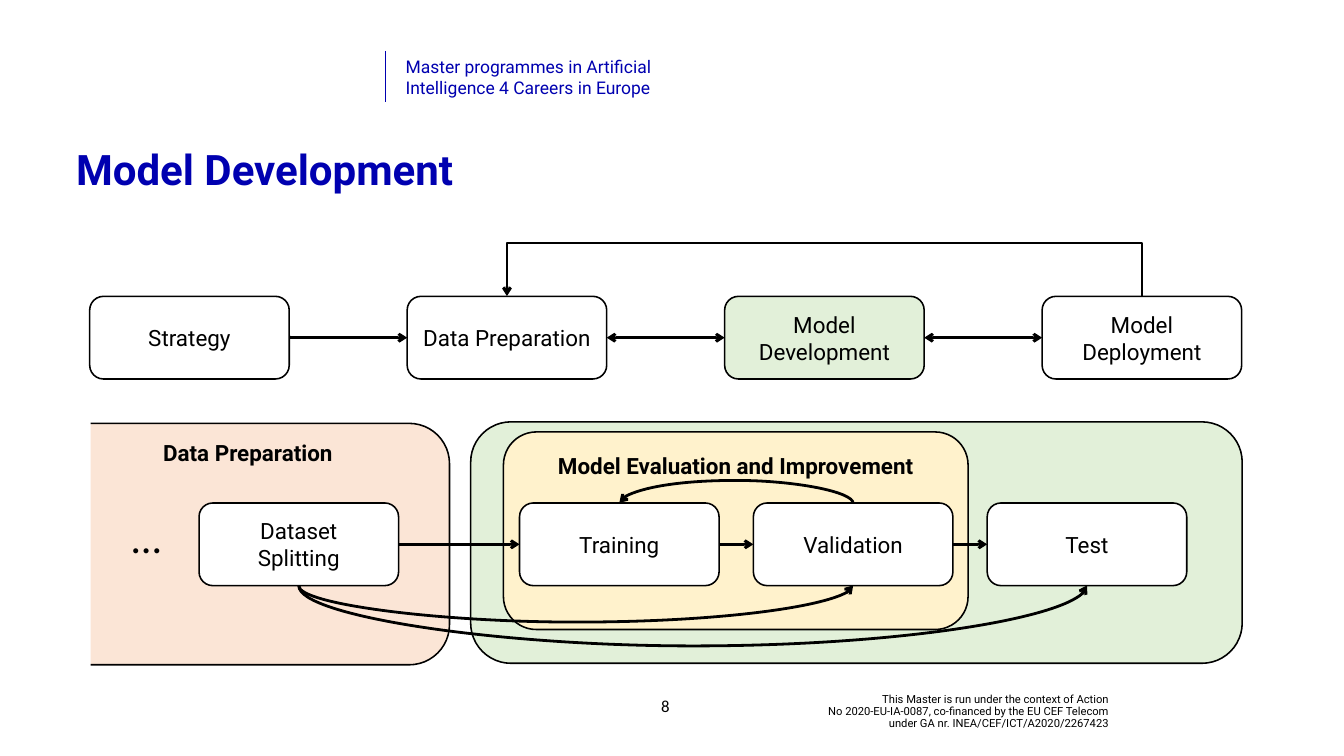
from lxml import etree
from pptx import Presentation
from pptx.dml.color import RGBColor
from pptx.enum.shapes import MSO_CONNECTOR, MSO_SHAPE
from pptx.enum.text import MSO_ANCHOR, MSO_AUTO_SIZE, PP_ALIGN
from pptx.oxml.ns import qn
from pptx.util import Inches, Pt

ROUND, RECT = MSO_SHAPE.ROUNDED_RECTANGLE, MSO_SHAPE.RECTANGLE
LINE, ELBOW, CURVE = MSO_CONNECTOR.STRAIGHT, MSO_CONNECTOR.ELBOW, MSO_CONNECTOR.CURVE
LEFT, MID, RIGHT = PP_ALIGN.LEFT, PP_ALIGN.CENTER, PP_ALIGN.RIGHT
TOP, CENTER = MSO_ANCHOR.TOP, MSO_ANCHOR.MIDDLE
HEX = {"blue": "0000B0", "black": "000000", "white": "FFFFFF",
       "green": "E2F0D9", "yellow": "FFF2CC", "peach": "FBE5D6"}
BOX_W, BOX_H = 3.96, 1.64
TOP_Y, LOW_Y = 5.88, 9.98
THIN = 0.01


def color(name):
    return RGBColor.from_string(HEX[name])


def write(frame, text, size, tone="black", bold=False, align=LEFT, anchor=TOP, font="Roboto"):
    frame.word_wrap = True
    frame.auto_size = MSO_AUTO_SIZE.NONE
    frame.vertical_anchor = anchor
    frame.text = text
    for para in frame.paragraphs:
        para.alignment = align
        for run in para.runs:
            run.font.name = font
            run.font.size = Pt(size)
            run.font.bold = bold
            run.font.color.rgb = color(tone)


def label(slide, area, text, size, **style):
    box = slide.shapes.add_textbox(*map(Inches, area))
    write(box.text_frame, text, size, **style)
    return box


def block(slide, kind, area, fill, edge=True):
    shape = slide.shapes.add_shape(kind, *map(Inches, area))
    shape.shadow.inherit = False
    shape.fill.solid()
    shape.fill.fore_color.rgb = color(fill)
    if edge:
        shape.line.color.rgb = color("black")
        shape.line.width = Pt(2.25)
    else:
        shape.line.fill.background()
    return shape


def fit(shape, text, pad=0.06, **style):
    frame = shape.text_frame
    frame.margin_left = frame.margin_right = frame.margin_bottom = Inches(0.06)
    frame.margin_top = Inches(pad)
    write(frame, text, 32, align=MID, **style)


def panel(slide, area, fill, text, pad):
    fit(block(slide, ROUND, area, fill), text, pad, bold=True)


def node(slide, left, top, text, fill="white"):
    shape = block(slide, ROUND, (left, top, BOX_W, BOX_H), fill)
    fit(shape, text, anchor=CENTER)
    return shape


def stroke(wire, width=4, tone="black", head=False, tail=False):
    wire.line.color.rgb = color(tone)
    wire.line.width = Pt(width)
    line = wire.line._ln
    for tag, shown in (("a:headEnd", head), ("a:tailEnd", tail)):
        if shown:
            etree.SubElement(line, qn(tag)).set("type", "arrow")
    etree.SubElement(wire._element.spPr, qn("a:effectLst"))


def link(slide, start, end, both=False):
    wire = slide.shapes.add_connector(LINE, 0, 0, 0, 0)
    wire.begin_connect(start, 3)
    wire.end_connect(end, 1)
    stroke(wire, head=both, tail=True)


def loop(slide, kind, right, left, depth, up):
    far, near = (s.left + s.width // 2 for s in (right, left))
    edge = right.top if up else right.top + right.height
    mid, half, thin = (far + near) // 2, (far - near) // 2, Inches(THIN) // 2
    wire = slide.shapes.add_connector(kind, mid - thin, edge - half, mid + thin, edge + half)
    form = wire._element.spPr.find(qn("a:xfrm"))
    form.set("rot", str((270 if up else 90) * 60000))
    if up:
        form.set("flipV", "1")
    geom = wire._element.spPr.find(qn("a:prstGeom"))
    guide = etree.SubElement(geom.find(qn("a:avLst")), qn("a:gd"))
    guide.set("name", "adj1")
    guide.set("fmla", f"val {round(depth / THIN * 100000)}")
    stroke(wire, head=not up, tail=up)


def frame_page(slide):
    foot = label(slide, (15.02, 13.74, 7.08, 0.76),
                 "This Master is run under the context of Action\v"
                 "No 2020-EU-IA-0087, co-financed by the EU CEF Telecom\v"
                 "under GA nr. INEA/CEF/ICT/A2020/2267423",
                 16, align=RIGHT, anchor=CENTER)
    foot.text_frame.paragraphs[0].line_spacing = 0.9
    rule = slide.shapes.add_connector(LINE, *map(Inches, (7.65, 1.01, 7.65, 2.03)))
    stroke(rule, 0.5, "blue")
    label(slide, (7.95, 1.06, 6.37, 0.94),
          "Master programmes in Artificial\vIntelligence 4 Careers in Europe", 25, tone="blue")
    label(slide, (12.65, 13.61, 1.11, 0.8), "8", 24, align=MID, anchor=CENTER, font="Calibri")
    title = slide.shapes.title
    title.left, title.top, title.width, title.height = map(Inches, (1.41, 2.83, 23.61, 2.29))
    write(title.text_frame, "Model Development", 60, tone="blue", bold=True)
    title.text_frame.paragraphs[0].line_spacing = Pt(70)


def draw_stages(slide):
    names = ("Strategy", "Data Preparation", "Model Development", "Model Deployment")
    fills = ("white", "white", "green", "white")
    row = [node(slide, 1.78 + 6.3 * i, TOP_Y, name, fill)
           for i, (name, fill) in enumerate(zip(names, fills))]
    for i in range(3):
        link(slide, row[i], row[i + 1], both=i > 0)
    loop(slide, ELBOW, row[3], row[1], 1.08, True)


def draw_detail(slide):
    block(slide, ROUND, (9.34, 8.37, 15.31, 4.79), "green")
    panel(slide, (9.99, 8.57, 9.22, 3.92), "yellow", "Model Evaluation and Improvement", 0.2)
    panel(slide, (0.92, 8.4, 8, 4.79), "peach", "Data Preparation", 0.07)
    train, check, test = (node(slide, 10.31 + 4.64 * i, LOW_Y, name)
                          for i, name in enumerate(("Training", "Validation", "Test")))
    split = node(slide, 3.95, LOW_Y, "Dataset\nSplitting")
    for start, end in ((split, train), (train, check), (check, test)):
        link(slide, start, end)
    loop(slide, CURVE, check, train, 0.46, True)
    loop(slide, CURVE, test, split, 1.22, False)
    loop(slide, CURVE, check, split, 0.74, False)
    block(slide, RECT, (0.68, 8.37, 1.12, 4.96), "white", edge=False)
    label(slide, (2.52, 10.09, 2.18, 1.11), "…", 60, font="Calibri")


def main():
    deck = Presentation()
    deck.slide_width, deck.slide_height = Inches(26.67), Inches(15)
    slide = deck.slides.add_slide(deck.slide_layouts[5])
    frame_page(slide)
    draw_stages(slide)
    draw_detail(slide)
    deck.save("out.pptx")


if __name__ == "__main__":
    main()
